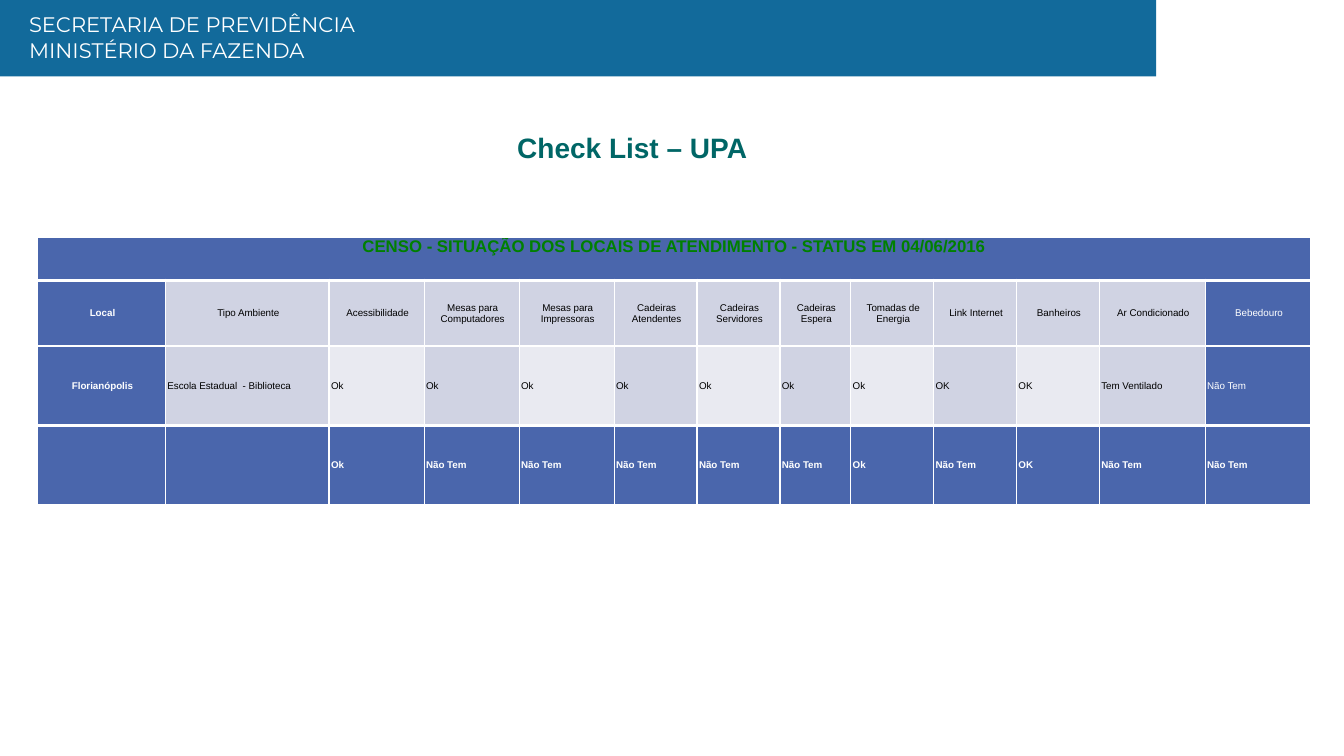
import pptx
import pptx.util
import pptx.dml.color
import pptx.enum.shapes
import pptx.enum.text
import pptx.oxml
import pptx.oxml.ns

Pt = pptx.util.Pt
ALIGN = pptx.enum.text.PP_ALIGN
ANCHOR = pptx.enum.text.MSO_ANCHOR

COLORS = {
    "banner": "126A9B", "white": "FFFFFF", "black": "000000",
    "title": "006666", "census": "008000",
    "blue": "4A66AC", "mid": "D0D3E3", "pale": "E9EAF1",
}
CENSUS = "CENSO - SITUAÇÃO DOS LOCAIS DE ATENDIMENTO - STATUS EM 04/06/2016"
HEADS = ["Local", "Tipo Ambiente", "Acessibilidade", "Mesas para Computadores",
         "Mesas para Impressoras", "Cadeiras Atendentes", "Cadeiras Servidores",
         "Cadeiras Espera", "Tomadas de Energia", "Link Internet", "Banheiros",
         "Ar Condicionado", "Bebedouro"]
SCHOOL = (["Florianópolis", "Escola Estadual  - Biblioteca"] + ["Ok"] * 7
          + ["OK"] * 2 + ["Tem Ventilado", "Não Tem"])
OTHER = (["", "", "Ok"] + ["Não Tem"] * 5
         + ["Ok", "Não Tem", "OK", "Não Tem", "Não Tem"])
ROWS = [[CENSUS] + [""] * 12, HEADS, SCHOOL, OTHER]
WIDTHS = [91.4, 116.9] + [67.9] * 3 + [59.2] * 2 + [50.6] + [59.2] * 3 + [75.6] * 2
HEIGHTS = [31, 46.8, 56.8, 56.8]
THICK = {(0, "B"), (1, "T"), (2, "B"), (3, "T")}


class Deck:
    def __init__(self):
        self.prs = pptx.Presentation()
        self.prs.slide_width, self.prs.slide_height = Pt(960), Pt(540)
        self.slide = self.prs.slides.add_slide(self.prs.slide_layouts[5])

    def color(self, name):
        return pptx.dml.color.RGBColor.from_string(COLORS[name])

    def style(self, frame, size, color, font="Arial", bold=False, align=ALIGN.LEFT):
        for para in frame.paragraphs:
            para.alignment = align
            for run in para.runs:
                run.font.name, run.font.size, run.font.bold = font, Pt(size), bold
                run.font.color.rgb = self.color(color)

    def rect(self, box, color):
        shape = self.slide.shapes.add_shape(
            pptx.enum.shapes.MSO_SHAPE.RECTANGLE, *map(Pt, box))
        shape.shadow.inherit = False
        shape.fill.solid()
        shape.fill.fore_color.rgb = self.color(color)
        shape.line.fill.background()

    def text(self, box, text, **look):
        frame = self.slide.shapes.add_textbox(*map(Pt, box)).text_frame
        frame.word_wrap = True
        frame.text = text
        self.style(frame, **look)

    def title(self, box, text, indent, **look):
        shape = self.slide.shapes.title
        shape.left, shape.top, shape.width, shape.height = map(Pt, box)
        frame = shape.text_frame
        frame.text = text
        frame.word_wrap = False
        frame.auto_size = pptx.enum.text.MSO_AUTO_SIZE.NONE
        frame.vertical_anchor = ANCHOR.TOP
        frame.paragraphs[0]._p.get_or_add_pPr().set("marL", str(Pt(indent)))
        self.style(frame, **look)

    def border(self, cell, row):
        props = cell._tc.get_or_add_tcPr()
        for side in "LRTB":
            width = Pt(3 if (row, side) in THICK else 1)
            props.append(pptx.oxml.parse_xml(
                f'<a:ln{side} {pptx.oxml.ns.nsdecls("a")} w="{width}"><a:solidFill>'
                f'<a:srgbClr val="{COLORS["white"]}"/></a:solidFill></a:ln{side}>'))

    def cell(self, cell, row, text, fill, **look):
        self.border(cell, row)
        cell.fill.solid()
        cell.fill.fore_color.rgb = self.color(fill)
        cell.margin_top = cell.margin_bottom = cell.margin_right = 0
        cell.margin_left = Pt(1.44 if row else 0)
        cell.vertical_anchor = ANCHOR.MIDDLE if row else ANCHOR.TOP
        if text:
            cell.text_frame.text = text
            self.style(cell.text_frame, **look)

    def table(self, left, top):
        table = self.slide.shapes.add_table(
            len(ROWS), len(WIDTHS), Pt(left), Pt(top),
            Pt(sum(WIDTHS)), Pt(sum(HEIGHTS))).table
        table.horz_banding = False
        for col, width in zip(table.columns, WIDTHS):
            col.width = Pt(width)
        last = len(WIDTHS) - 1
        for r, (height, texts) in enumerate(zip(HEIGHTS, ROWS)):
            table.rows[r].height = Pt(height)
            for c, text in enumerate(texts):
                solid = r in (0, 3) or c in (0, last)
                pale = r == 2 and c % 2 == 0
                self.cell(
                    table.cell(r, c), r, text,
                    fill="blue" if solid else "pale" if pale else "mid",
                    size=7 if r else 12,
                    color="census" if r == 0 else "white" if solid else "black",
                    bold=r in (0, 3) or c == 0,
                    align=ALIGN.CENTER if r < 2 or c == 0 else ALIGN.LEFT)
        table.cell(0, 0).merge(table.cell(0, last))


def main():
    deck = Deck()
    deck.rect((-0.7, -0.7, 826.6, 55.4), "banner")
    deck.text((13.7, 5, 551.5, 43.9),
              "SECRETARIA DE PREVIDÊNCIA\nMINISTÉRIO DA FAZENDA",
              size=15, color="white", font="Montserrat")
    deck.title((326.2, 89.3, 216.7, 60.5), "Check List – UPA", 36,
               size=20, color="title", bold=True)
    deck.table(26.8, 169.4)
    deck.prs.save("out.pptx")


if __name__ == "__main__":
    main()
